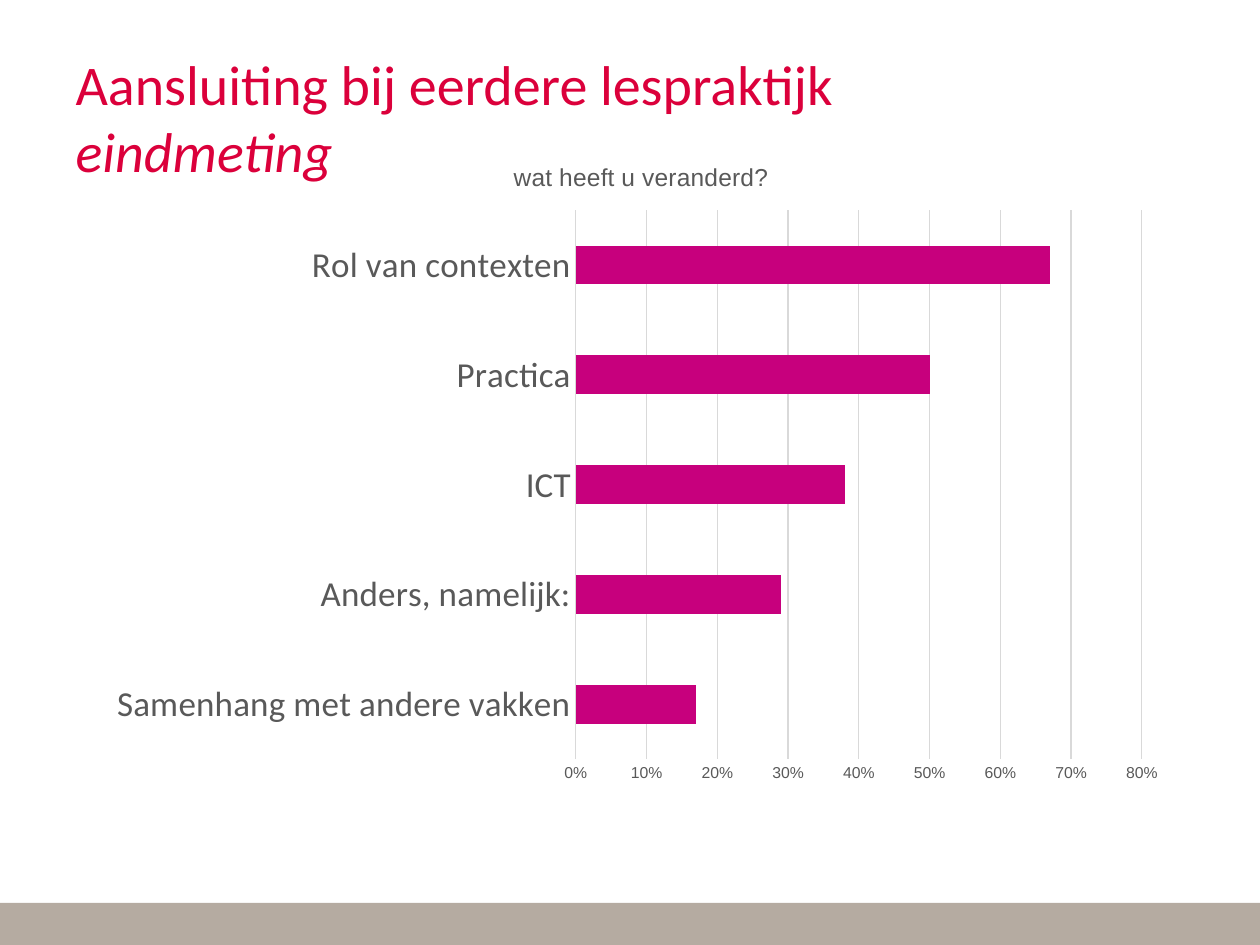
from lxml import etree
from pptx import Presentation
from pptx.chart.data import CategoryChartData
from pptx.dml.color import RGBColor
from pptx.enum import chart as kinds, shapes, text
from pptx.oxml import ns
from pptx.util import Pt

RED = RGBColor(0xDB, 0x00, 0x3B)
MAGENTA = RGBColor(0xC7, 0x00, 0x7D)
TAUPE = RGBColor(0xB5, 0xAB, 0xA1)
GREY = RGBColor(0x59, 0x59, 0x59)
LIGHT_GREY = RGBColor(0xD9, 0xD9, 0xD9)
BLACK = RGBColor(0, 0, 0)


def set_font(font, name, size, color):
    font.name = name
    font.size = Pt(size)
    font.bold = False
    font.color.rgb = color


deck = Presentation()
deck.slide_width = Pt(720)
deck.slide_height = Pt(540)
page = deck.slides.add_slide(deck.slide_layouts[5])

footer = page.shapes.add_shape(shapes.MSO_SHAPE.RECTANGLE, Pt(0), Pt(516), Pt(720), Pt(24))
footer.shadow.inherit = False
footer.fill.solid()
footer.fill.fore_color.rgb = TAUPE
footer.line.fill.background()

title = page.shapes.title
title.left, title.top, title.width, title.height = Pt(36), Pt(21.6), Pt(648), Pt(90)
frame = title.text_frame
frame.word_wrap = True
frame.auto_size = text.MSO_AUTO_SIZE.NONE
frame.vertical_anchor = text.MSO_ANCHOR.MIDDLE
para = frame.paragraphs[0]
para.alignment = text.PP_ALIGN.LEFT
para.add_run().text = "Aansluiting bij eerdere lespraktijk"
para.add_line_break()
span = para.add_run()
span.text = "eindmeting"
span.font.italic = True
set_font(para.font, "Calibri", 32, RED)

data = CategoryChartData(number_format="0%")
data.categories = ["Samenhang met andere vakken", "Anders, namelijk:", "ICT", "Practica", "Rol van contexten"]
data.add_series("Series 1", [0.17, 0.29, 0.38, 0.5, 0.67])
chart = page.shapes.add_chart(
    kinds.XL_CHART_TYPE.BAR_CLUSTERED, Pt(55.4), Pt(78.5), Pt(622), Pt(378), data
).chart
set_font(chart.font, "Arial", 10, BLACK)
chart.has_legend = False
chart.has_title = True
chart.chart_title.include_in_layout = False
heading = chart.chart_title.text_frame.paragraphs[0]
heading.text = "wat heeft u veranderd?"
set_font(heading.font, "Arial", 14, GREY)

plot = chart.plots[0]
plot.gap_width = 182
plot.vary_by_categories = False
bars = plot.series[0].format.fill
bars.solid()
bars.fore_color.rgb = MAGENTA

categories, values = chart.category_axis, chart.value_axis
for axis, font_name, size in ((categories, "Calibri", 20), (values, "Arial", 9)):
    axis.major_tick_mark = axis.minor_tick_mark = kinds.XL_TICK_MARK.NONE
    set_font(axis.tick_labels.font, font_name, size, GREY)
values.minimum_scale = 0
values.maximum_scale = 0.8
values.major_unit = 0.1
values.tick_labels.number_format = "0%"
values.tick_labels.number_format_is_linked = False
values.format.line.fill.background()
values.has_major_gridlines = True
for line in (categories.format.line, values.major_gridlines.format.line):
    line.color.rgb = LIGHT_GREY
    line.width = Pt(0.75)

plot_area = chart.element.find(".//" + ns.qn("c:plotArea"))
for layout in plot_area.findall(ns.qn("c:layout")):
    plot_area.remove(layout)
layout = etree.Element(ns.qn("c:layout"))
manual = etree.SubElement(layout, ns.qn("c:manualLayout"))
for tag, value in (("layoutTarget", "inner"), ("xMode", "edge"), ("yMode", "edge"),
                   ("x", "0.44"), ("y", "0.11"), ("w", "0.52"), ("h", "0.83")):
    etree.SubElement(manual, ns.qn("c:" + tag)).set("val", value)
plot_area.insert(0, layout)

deck.save("out.pptx")
